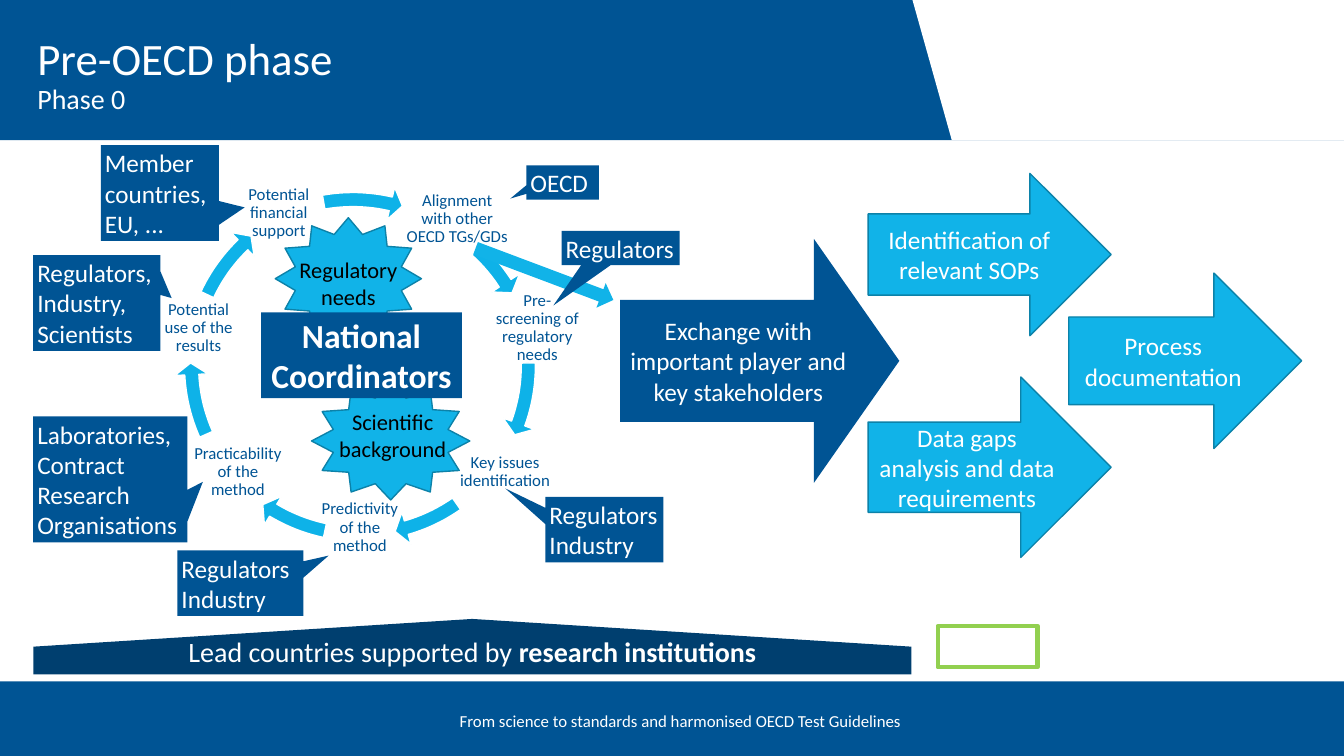
"""Build the Pre-OECD phase slide: the cycle, its callouts and the steps that follow."""
from dataclasses import dataclass
from math import cos, radians, sin

from pptx import Presentation
from pptx.dml.color import RGBColor
from pptx.enum.shapes import MSO_SHAPE
from pptx.enum.text import MSO_ANCHOR, MSO_AUTO_SIZE, PP_ALIGN
from pptx.util import Pt

PX = 9144


@dataclass(frozen=True)
class Theme:
    font: str = "Calibri"
    blue: str = "005494"
    navy: str = "003F6F"
    sky: str = "11B3E8"
    ring: str = "0EB2E8"
    edge: str = "0C82A9"
    green: str = "92D050"
    white: str = "FFFFFF"
    black: str = "000000"
    small: int = 12
    note: int = 16
    body: int = 18
    lead: int = 20
    core: int = 24
    head: int = 32


theme = Theme()


def write(shape, text, size=theme.body, color=theme.white, bold=False, align=PP_ALIGN.CENTER,
          anchor=MSO_ANCHOR.MIDDLE, pad=(10, 5), space=1.0, tail=""):
    frame = shape.text_frame
    frame.word_wrap = True
    frame.auto_size = MSO_AUTO_SIZE.NONE
    frame.vertical_anchor = anchor
    frame.margin_left = frame.margin_right = pad[0] * PX
    frame.margin_top = frame.margin_bottom = pad[1] * PX
    para = frame.paragraphs[0]
    para.text = text
    para.alignment = align
    para.line_spacing = space
    if tail:
        para.add_run().text = tail
    for run in para.runs:
        run.font.name = theme.font
        run.font.size = Pt(size)
        run.font.bold = bold
        run.font.color.rgb = RGBColor.from_string(color)
    return para.runs


def paint(shape, fill=None, line=None, width=1):
    shape.shadow.inherit = False
    if fill:
        shape.fill.solid()
        shape.fill.fore_color.rgb = RGBColor.from_string(fill)
    else:
        shape.fill.background()
    if line:
        shape.line.color.rgb = RGBColor.from_string(line)
        shape.line.width = Pt(width)
    else:
        shape.line.fill.background()
    return shape


deck = Presentation()
deck.slide_width, deck.slide_height = 1333 * PX, 750 * PX
slide = deck.slides.add_slide(deck.slide_layouts[5])
shapes = slide.shapes

for top, height in ((676, 74), (0, 139)):
    paint(shapes.add_shape(MSO_SHAPE.RECTANGLE, 0, top * PX, 1333 * PX, height * PX), theme.blue)
pen = shapes.build_freeform(905, 0, scale=PX)
pen.add_line_segments([(1333, 0), (1333, 139), (944, 139)])
paint(pen.convert_to_shape(), theme.white)

title = shapes.title
title.element.getparent().append(title.element)
title.left, title.top, title.width, title.height = (PX * n for n in (33, 21, 871, 109))
runs = write(title, "Pre-OECD phase\vPhase 0", size=theme.head, align=PP_ALIGN.LEFT,
             pad=(4, 2), space=0.9)
runs[1].font.size = Pt(theme.lead)

labels = (
    ((400, 182, 107, 71), "Alignment with other OECD TGs/GDs"),
    ((485, 290, 96, 71), "Pre-screening of regulatory needs"),
    ((453, 433, 96, 71), "Key issues identification"),
    ((309, 488, 96, 71), "Predictivity of the method"),
    ((189, 433, 94, 71), "Practicability of the method"),
    ((156, 290, 82, 71), "Potential use of the results"),
    ((234, 176, 85, 71), "Potential financial support"),
)
for box, text in labels:
    write(shapes.add_textbox(*(PX * n for n in box)), text, size=theme.small,
          color=theme.blue, pad=(2, 2), space=0.9)

arcs = (
    (361, 372, -48, -33), (357, 363, -1, 20), (357, 363, 55, 74), (357, 363, 102, 121),
    (357, 363, 156, 177), (357, 363, 205, 226), (350, 365, 260, 283),
)
for mid_x, mid_y, start, end in arcs:
    sweep = [start + (end - start) * step / 12 for step in range(13)]
    polar = [(174, turn) for turn in sweep]
    polar += [(184, end), (168, end + 4), (151, end)]
    polar += [(160, turn) for turn in reversed(sweep)]
    points = [(PX * (mid_x + reach * cos(radians(turn))), PX * (mid_y + reach * sin(radians(turn))))
              for reach, turn in polar]
    pen = shapes.build_freeform(*points[0])
    pen.add_line_segments(points[1:])
    paint(pen.convert_to_shape(), theme.ring, theme.white)

stars = (
    ((273, 216, 145, 121), (280, 249, 131, 64), "Regulatory\vneeds"),
    ((309, 379, 157, 117), (323, 400, 133, 64), "Scientific\vbackground"),
)
for box, area, text in stars:
    star = shapes.add_shape(MSO_SHAPE.STAR_12_POINT, *(PX * n for n in box))
    star.adjustments[0] = 0.375
    paint(star, theme.sky, theme.edge)
    write(shapes.add_textbox(*(PX * n for n in area)), text, size=theme.note,
          color=theme.black, anchor=MSO_ANCHOR.TOP)

foot = shapes.add_textbox(*(PX * n for n in (202, 695, 946, 40)))
write(foot, "From science to standards and harmonised OECD Test Guidelines", size=theme.small)

roof = shapes.add_shape(MSO_SHAPE.PENTAGON, *(PX * n for n in (441, 206, 55, 871)))
roof.rotation = 270
paint(roof, theme.navy)
base = shapes.add_textbox(*(PX * n for n in (33, 625, 871, 44)))
runs = write(base, "Lead countries supported by ", size=theme.lead, anchor=MSO_ANCHOR.TOP,
             tail="research institutions")
runs[1].font.bold = True

link = shapes.add_shape(MSO_SHAPE.RIGHT_ARROW, *(PX * n for n in (467, 259, 146, 26)))
link.rotation = 20.6
paint(link, theme.sky)

calls = (
    ((522, 164, 72, 34), (-0.72, 0.47), "OECD"),
    ((176, 546, 125, 65), (0.7, -0.42), "Regulators\vIndustry"),
    ((541, 493, 117, 65), (-0.84, -0.63), "Regulators Industry"),
    ((100, 144, 117, 95), (0.72, 0.15), "Member countries, EU, ..."),
    ((33, 253, 126, 95), (0.59, -0.05), "Regulators, Industry, Scientists"),
    ((33, 413, 153, 125), (0.6, 0.02), "Laboratories, Contract Research Organisations"),
    ((557, 229, 117, 34), (-0.57, 1.68), "Regulators"),
)
for box, tip, text in calls:
    call = shapes.add_shape(MSO_SHAPE.RECTANGULAR_CALLOUT, *(PX * n for n in box))
    call.adjustments[0], call.adjustments[1] = tip
    paint(call, theme.blue)
    write(call, text, align=PP_ALIGN.LEFT, pad=(4, 2))

core = shapes.add_shape(MSO_SHAPE.RECTANGLE, *(PX * n for n in (259, 310, 199, 85)))
paint(core, theme.blue)
write(core, "National\vCoordinators", size=theme.core, bold=True, pad=(4, 2))

frame = shapes.add_shape(MSO_SHAPE.RECTANGLE, *(PX * n for n in (930, 621, 99, 41)))
paint(frame, line=theme.green, width=3)

steps = (
    ((615, 237, 277, 242), 0.35, theme.blue, None, "Exchange with important player and key stakeholders"),
    ((1060, 271, 231, 174), 0.5, theme.sky, theme.edge, "Process documentation"),
    ((861, 172, 241, 161), 0.5, theme.sky, theme.edge, "Identification of relevant SOPs"),
    ((861, 374, 241, 179), 0.5, theme.sky, theme.edge, "Data gaps analysis and data requirements"),
)
for box, point, fill, line, text in steps:
    step = shapes.add_shape(MSO_SHAPE.RIGHT_ARROW, *(PX * n for n in box))
    step.adjustments[1] = point
    paint(step, fill, line)
    write(step, text)

deck.save("out.pptx")
